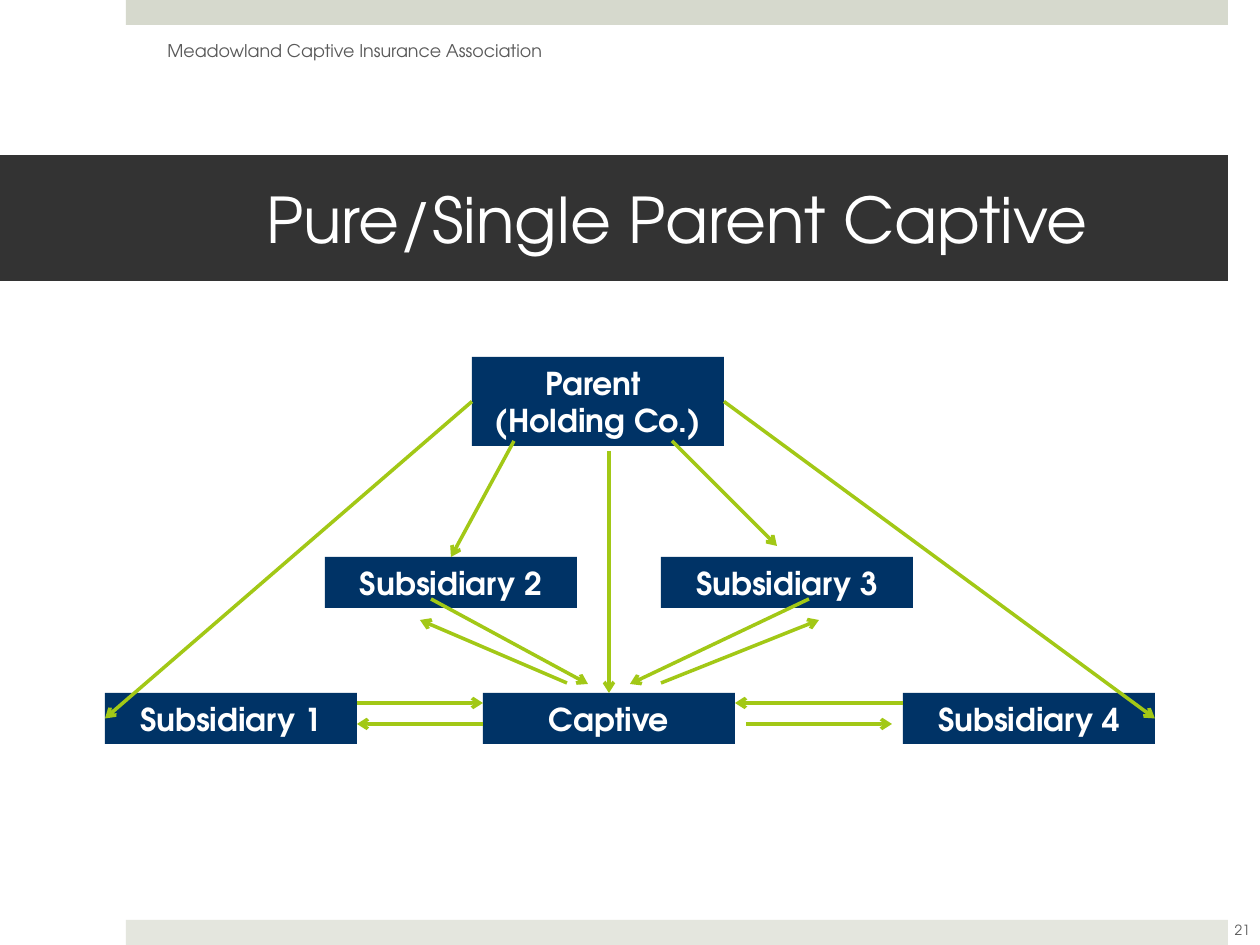
import pptx
import pptx.util
import pptx.dml.color
import pptx.enum.shapes
import pptx.enum.text
import pptx.oxml
import pptx.oxml.ns
from dataclasses import dataclass

PX = 914400 // 126
TOP, LEFT, BOTTOM, RIGHT = range(4)


@dataclass(frozen=True)
class Theme:
    """Colours, font and type sizes of the slide."""
    font: str = "TeX Gyre Adventor"
    top_bar: str = "D6D9CD"
    bottom_bar: str = "E4E6DE"
    title_band: str = "333333"
    entity: str = "003366"
    flow: str = "A2C816"
    light: str = "FFFFFF"
    muted: str = "595959"
    title_size: int = 36
    entity_size: int = 18
    header_size: int = 10
    number_size: int = 8
    flow_width: int = 2


THEME = Theme()


def px(*lengths):
    """Turn pixel lengths into EMU."""
    return [pptx.util.Emu(length * PX) for length in lengths]


def paint(part, colour):
    """Give a shape a plain fill."""
    part.fill.solid()
    part.fill.fore_color.rgb = pptx.dml.color.RGBColor.from_string(colour)


def write(part, text, size, colour, centred=True, bold=False):
    """Put styled text into a shape."""
    frame = part.text_frame
    frame.text = text
    frame.word_wrap = True
    frame.vertical_anchor = pptx.enum.text.MSO_ANCHOR.MIDDLE
    align = pptx.enum.text.PP_ALIGN
    for paragraph in frame.paragraphs:
        paragraph.alignment = align.CENTER if centred else align.LEFT
        paragraph.font.name = THEME.font
        paragraph.font.size = pptx.util.Pt(size)
        paragraph.font.bold = bold
        paragraph.font.color.rgb = pptx.dml.color.RGBColor.from_string(colour)


def add_block(slide, bounds, colour):
    """Add a flat rectangle."""
    block = slide.shapes.add_shape(
        pptx.enum.shapes.MSO_SHAPE.RECTANGLE, *px(*bounds))
    block.shadow.inherit = False
    block.line.fill.background()
    paint(block, colour)
    return block


def add_title(slide, text):
    """Turn the title placeholder into the dark title band."""
    title = slide.shapes.title
    title.left, title.top, title.width, title.height = px(0, 155, 1228, 126)
    paint(title, THEME.title_band)
    write(title, text, THEME.title_size, THEME.light)
    frame = title.text_frame
    frame.auto_size = pptx.enum.text.MSO_AUTO_SIZE.NONE
    frame.margin_left, frame.margin_right = px(164, 38)


def add_label(slide, bounds, text, size, centred):
    """Add a small muted text."""
    label = slide.shapes.add_textbox(*px(*bounds))
    write(label, text, size, THEME.muted, centred)


def add_entity(slide, left, top, name, height=51):
    """Add the box of one company."""
    entity = add_block(slide, (left, top, 252, height), THEME.entity)
    write(entity, name, THEME.entity_size, THEME.light, bold=True)
    entity.text_frame.auto_size = pptx.enum.text.MSO_AUTO_SIZE.SHAPE_TO_FIT_TEXT
    return entity


def add_flow(slide, start, end, source=None, target=None):
    """Add an arrow, joined to (entity, side) pairs where given."""
    flow = slide.shapes.add_connector(
        pptx.enum.shapes.MSO_CONNECTOR.STRAIGHT, *px(*start, *end))
    if source:
        flow.begin_connect(*source)
    if target:
        flow.end_connect(*target)
    flow.line.width = pptx.util.Pt(THEME.flow_width)
    flow.line.color.rgb = pptx.dml.color.RGBColor.from_string(THEME.flow)
    head = pptx.oxml.parse_xml(
        f'<a:tailEnd {pptx.oxml.ns.nsdecls("a")} type="arrow"/>')
    flow.line._get_or_add_ln().append(head)
    flow._element.spPr.append(pptx.oxml.parse_xml(
        f'<a:effectLst {pptx.oxml.ns.nsdecls("a")}/>'))


def main():
    """Build the captive structure slide."""
    deck = pptx.Presentation()
    deck.slide_width, deck.slide_height = px(1260, 945)
    slide = deck.slides.add_slide(deck.slide_layouts[5])

    add_block(slide, (126, 0, 1102, 25), THEME.top_bar)
    add_block(slide, (126, 920, 1102, 25), THEME.bottom_bar)
    add_title(slide, "Pure/Single Parent Captive")
    add_label(slide, (155, 26, 400, 50),
              "Meadowland Captive Insurance Association",
              THEME.header_size, centred=False)
    add_label(slide, (1211, 905, 63, 50), "21", THEME.number_size, centred=True)

    parent = add_entity(slide, 472, 357, "Parent \n(Holding Co.)", height=89)
    subsidiary_1 = add_entity(slide, 105, 693, "Subsidiary 1")
    captive = add_entity(slide, 483, 693, "Captive")
    subsidiary_4 = add_entity(slide, 903, 693, "Subsidiary 4")
    add_entity(slide, 661, 557, "Subsidiary 3")
    subsidiary_2 = add_entity(slide, 325, 557, "Subsidiary 2")

    add_flow(slide, (472, 402), (105, 718), (parent, LEFT), (subsidiary_1, LEFT))
    add_flow(slide, (724, 402), (1155, 718), (parent, RIGHT), (subsidiary_4, RIGHT))
    add_flow(slide, (514, 441), (451, 557), target=(subsidiary_2, TOP))
    add_flow(slide, (609, 451), (609, 693), target=(captive, TOP))
    free_flows = [
        ((672, 441), (777, 546)),
        ((357, 703), (483, 703)),
        ((431, 599), (588, 684)),
        ((809, 599), (630, 684)),
        ((903, 703), (735, 703)),
        ((483, 724), (357, 724)),
        ((746, 724), (892, 724)),
        ((567, 683), (420, 620)),
        ((661, 683), (819, 620)),
    ]
    for start, end in free_flows:
        add_flow(slide, start, end)

    deck.save("out.pptx")


if __name__ == "__main__":
    main()
